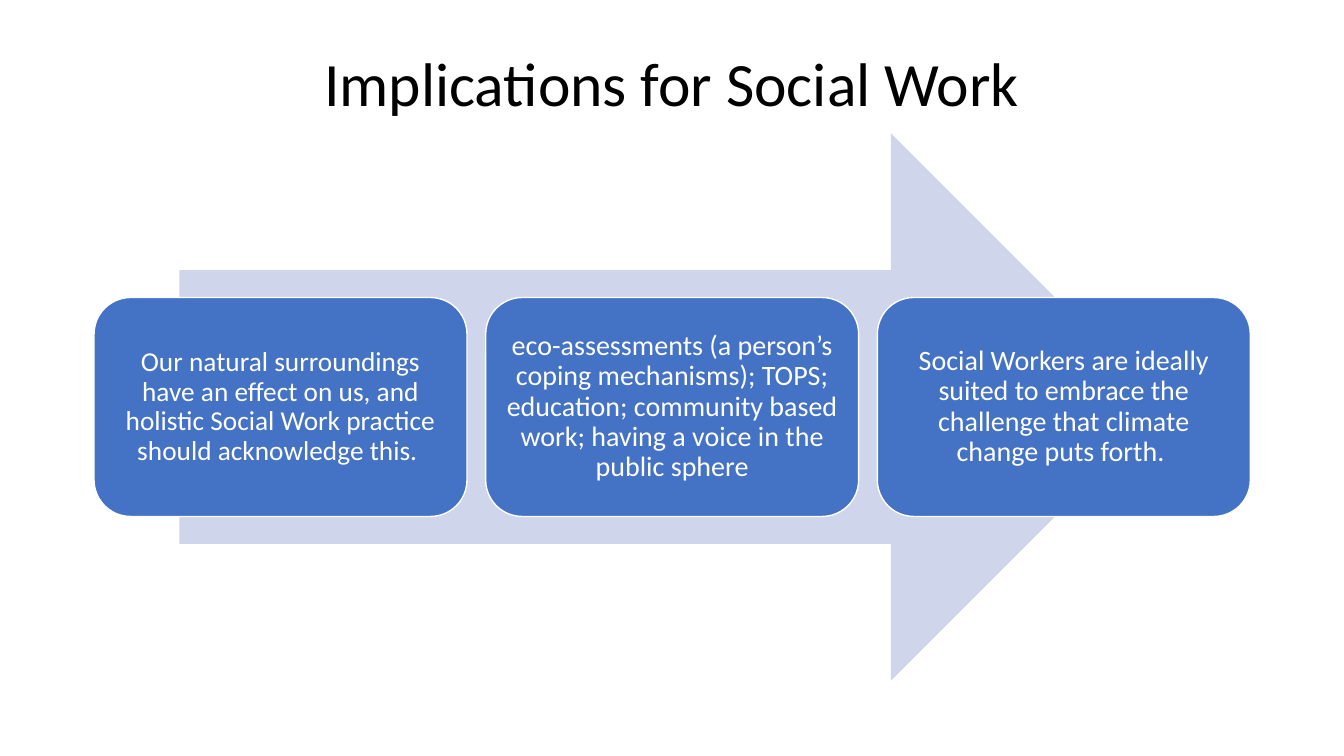
from dataclasses import dataclass

from pptx import Presentation
from pptx.dml.color import RGBColor
from pptx.enum.shapes import MSO_SHAPE
from pptx.enum.text import MSO_ANCHOR, PP_ALIGN
from pptx.shapes.autoshape import Shape
from pptx.shapes.shapetree import GroupShapes
from pptx.text.text import TextFrame
from pptx.util import Pt


@dataclass(frozen=True)
class Theme:
    font: str = "Calibri"
    ink: RGBColor = RGBColor(0x00, 0x00, 0x00)
    white: RGBColor = RGBColor(0xFF, 0xFF, 0xFF)
    step_fill: RGBColor = RGBColor(0x44, 0x72, 0xC4)
    arrow_fill: RGBColor = RGBColor(0xCF, 0xD5, 0xEA)
    title_size: float = 44
    step_size: float = 20
    long_step_size: float = 19.5


@dataclass(frozen=True)
class Box:
    left: float
    top: float
    width: float
    height: float


@dataclass(frozen=True)
class Implication:
    text: str
    size: float


THEME = Theme()
TITLE_BOX = Box(66, 28.5, 828, 67)
ARROW_BOX = Box(128.1, 95.2, 703.8, 391)
FIRST_STEP = Box(67.2, 212.5, 266.4, 156.4)
STEP_PITCH = 279.75

IMPLICATIONS = (
    Implication(
        "Our natural surroundings have an effect on us, and holistic "
        "Social Work practice should acknowledge this. ",
        THEME.long_step_size,
    ),
    Implication(
        "eco-assessments (a person’s coping mechanisms); TOPS; education; "
        "community based work; having a voice in the public sphere",
        THEME.step_size,
    ),
    Implication(
        "Social Workers are ideally suited to embrace the challenge that "
        "climate change puts forth. ",
        THEME.step_size,
    ),
)


def write_text(frame: TextFrame, text: str, *, size: float, color: RGBColor,
               inset: float, space_after: float = 0) -> None:
    frame.word_wrap = True
    frame.vertical_anchor = MSO_ANCHOR.MIDDLE
    frame.margin_left = frame.margin_right = Pt(inset)
    frame.margin_top = frame.margin_bottom = Pt(inset)
    paragraph = frame.paragraphs[0]
    paragraph.alignment = PP_ALIGN.CENTER
    paragraph.line_spacing = 0.9
    paragraph.space_after = Pt(space_after)
    run = paragraph.add_run()
    run.text = text
    run.font.name = THEME.font
    run.font.size = Pt(size)
    run.font.color.rgb = color


def draw_shape(shapes: GroupShapes, kind: MSO_SHAPE, box: Box,
               fill: RGBColor) -> Shape:
    drawn = shapes.add_shape(kind, Pt(box.left), Pt(box.top),
                             Pt(box.width), Pt(box.height))
    drawn.shadow.inherit = False
    drawn.fill.solid()
    drawn.fill.fore_color.rgb = fill
    drawn.line.fill.background()
    return drawn


def draw_implication(shapes: GroupShapes, implication: Implication,
                     box: Box) -> None:
    step = draw_shape(shapes, MSO_SHAPE.ROUNDED_RECTANGLE, box,
                      THEME.step_fill)
    step.line.color.rgb = THEME.white
    step.line.width = Pt(1)
    write_text(step.text_frame, implication.text, size=implication.size,
               color=THEME.white, inset=6, space_after=7)


def main() -> None:
    deck = Presentation()
    deck.slide_width, deck.slide_height = Pt(960), Pt(540)
    slide = deck.slides.add_slide(deck.slide_layouts[5])

    title = slide.shapes.title
    title.left, title.top = Pt(TITLE_BOX.left), Pt(TITLE_BOX.top)
    title.width, title.height = Pt(TITLE_BOX.width), Pt(TITLE_BOX.height)
    write_text(title.text_frame, "Implications for Social Work",
               size=THEME.title_size, color=THEME.ink, inset=3.6)

    process = slide.shapes.add_group_shape().shapes
    draw_shape(process, MSO_SHAPE.RIGHT_ARROW, ARROW_BOX, THEME.arrow_fill)
    for index, implication in enumerate(IMPLICATIONS):
        box = Box(FIRST_STEP.left + index * STEP_PITCH, FIRST_STEP.top,
                  FIRST_STEP.width, FIRST_STEP.height)
        draw_implication(process, implication, box)

    deck.save("out.pptx")


if __name__ == "__main__":
    main()
